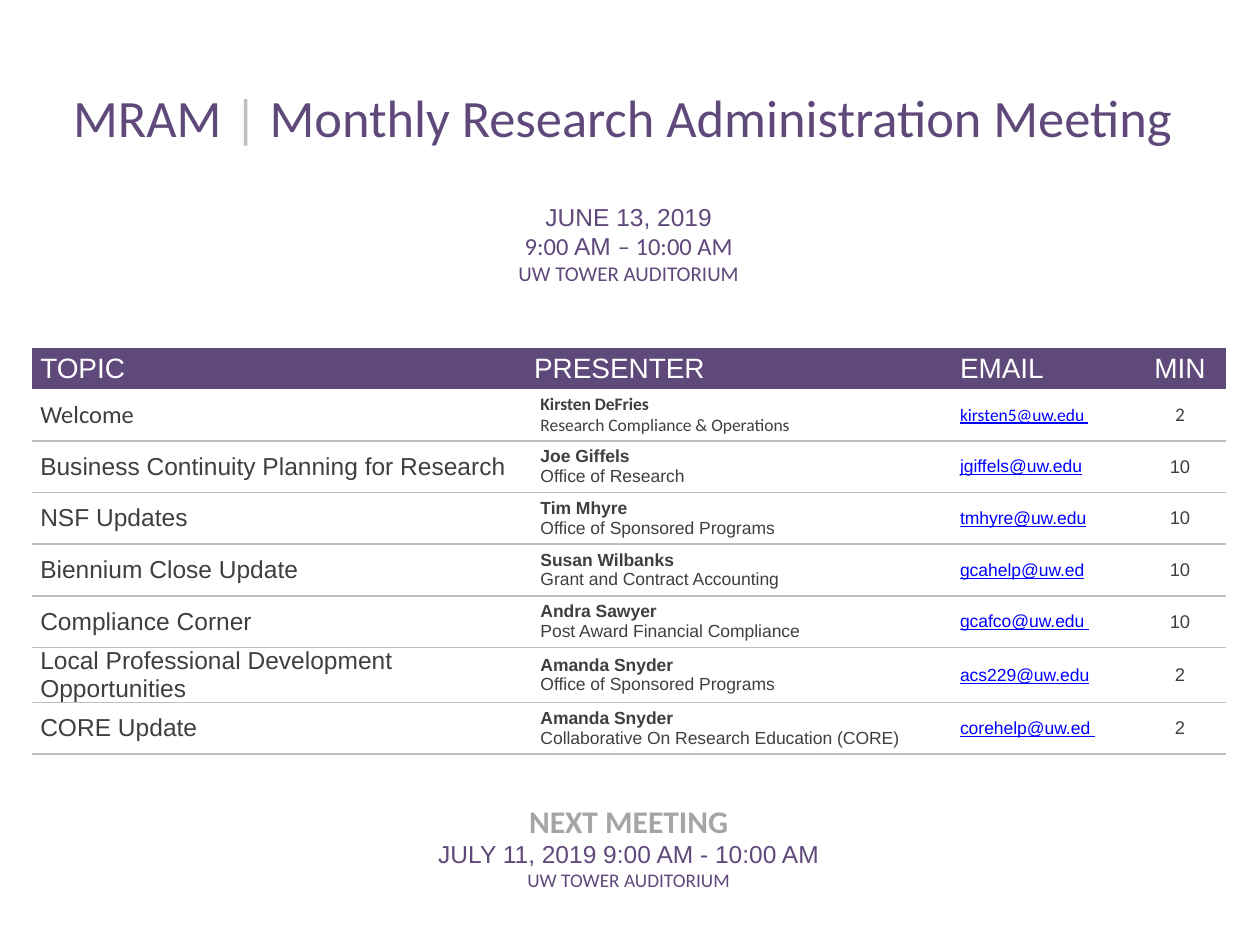
from dataclasses import dataclass

from lxml import etree
from pptx import Presentation
from pptx import util as u
from pptx.dml.color import RGBColor
from pptx.enum import text
from pptx.oxml.ns import qn

PURPLE = RGBColor(0x5F, 0x49, 0x7A)
WHITE = RGBColor(0xFF, 0xFF, 0xFF)
INK = RGBColor(0x3F, 0x3F, 0x3F)
LINK = RGBColor(0x00, 0x00, 0xFF)
RULE = RGBColor(0xBF, 0xBF, 0xBF)
GREY = RGBColor(0xA5, 0xA5, 0xA5)

LEFT, TOP = 0.25, 0.58
COLS = [3.92, 3.33, 1.5, 0.73]
TITLE_H, DATE_H, HEAD_H, ITEM_H, NEXT_H = 0.62, 1.56, 0.33, 0.41, 1.1
PAD, WIDE_PAD = 0.07, 0.12
NO_STYLE = "{2D5ABB26-0587-4C30-8999-92F81FD0307C}"

LEFT_AL, CENTER = text.PP_ALIGN.LEFT, text.PP_ALIGN.CENTER
MIDDLE, BOTTOM = text.MSO_ANCHOR.MIDDLE, text.MSO_ANCHOR.BOTTOM


@dataclass
class Run:
    text: str
    font: str | None = None
    color: RGBColor | None = None


@dataclass
class Line:
    runs: list[Run]
    size: float
    color: RGBColor
    font: str = "Arial"
    bold: bool = False
    underline: bool = False


@dataclass
class Item:
    topic: str
    presenter: str
    office: str
    email: str
    minutes: int
    font: str = "Arial"


ITEMS = [
    Item("Welcome", "Kirsten DeFries", "Research Compliance & Operations",
         "kirsten5@uw.edu ", 2, "Calibri"),
    Item("Business Continuity Planning for Research", "Joe Giffels",
         "Office of Research", "jgiffels@uw.edu", 10),
    Item("NSF Updates", "Tim Mhyre", "Office of Sponsored Programs",
         "tmhyre@uw.edu", 10),
    Item("Biennium Close Update", "Susan Wilbanks",
         "Grant and Contract Accounting", "gcahelp@uw.ed", 10),
    Item("Compliance Corner", "Andra Sawyer",
         "Post Award Financial Compliance", "gcafco@uw.edu ", 10),
    Item("Local Professional Development Opportunities", "Amanda Snyder",
         "Office of Sponsored Programs", "acs229@uw.edu", 2),
    Item("CORE Update", "Amanda Snyder",
         "Collaborative On Research Education (CORE)", "corehelp@uw.ed ", 2),
]


def line(content: str, size: float, color: RGBColor, font: str = "Arial",
         **style: bool) -> Line:
    return Line([Run(content)], size, color, font, **style)


def fill_cell(cell, lines: list[Line], align=LEFT_AL, anchor=MIDDLE,
              pad: float = PAD, bottom: float = 0, fill: RGBColor = WHITE) -> None:
    cell.fill.solid()
    cell.fill.fore_color.rgb = fill
    cell.vertical_anchor = anchor
    cell.margin_left = cell.margin_right = u.Inches(pad)
    cell.margin_top, cell.margin_bottom = 0, u.Inches(bottom)
    tf = cell.text_frame
    for i, ln in enumerate(lines):
        p = tf.add_paragraph() if i else tf.paragraphs[0]
        p.alignment = align
        p.font.size = u.Pt(ln.size)
        p.font.bold, p.font.underline = ln.bold, ln.underline
        p.font.name = ln.font
        p.font.color.rgb = ln.color
        for part in ln.runs:
            r = p.add_run()
            r.text = part.text
            if part.font:
                r.font.name = part.font
            if part.color:
                r.font.color.rgb = part.color


def rule_cell(cell, edge: str) -> None:
    """Draw a thin rule on the top (lnT) or bottom (lnB) edge."""
    tc_pr = cell._tc.get_or_add_tcPr()
    ln = etree.Element(qn(f"a:{edge}"), w=str(u.Pt(1)))
    solid = etree.SubElement(ln, qn("a:solidFill"))
    etree.SubElement(solid, qn("a:srgbClr"), val=str(RULE))
    tc_pr.insert(0, ln)


def add_banner(table, row: int, lines: list[Line], bottom: float = 0) -> None:
    """Fill a row merged across all columns."""
    cell = table.cell(row, 0)
    cell.merge(table.cell(row, len(COLS) - 1))
    fill_cell(cell, lines, CENTER, BOTTOM, bottom=bottom)


def add_item(table, row: int, item: Item) -> None:
    cells = table.rows[row].cells
    fill_cell(cells[0], [line(item.topic, 14, INK, item.font)])
    fill_cell(cells[1], [line(item.presenter, 10, INK, item.font, bold=True),
                         line(item.office, 10, INK, item.font)], pad=WIDE_PAD)
    fill_cell(cells[2], [line(item.email, 10, LINK, item.font, underline=True)],
              pad=WIDE_PAD)
    fill_cell(cells[3], [line(str(item.minutes), 11 if item.font == "Calibri" else 10.5,
                              INK, item.font)], CENTER)
    for cell in cells:
        rule_cell(cell, "lnB")


def main() -> None:
    prs = Presentation()
    prs.slide_width, prs.slide_height = u.Inches(10), u.Inches(7.5)
    slide = prs.slides.add_slide(prs.slide_layouts[6])

    heights = [TITLE_H, DATE_H, HEAD_H] + [ITEM_H] * len(ITEMS) + [NEXT_H]
    frame = slide.shapes.add_table(
        len(heights), len(COLS), u.Inches(LEFT), u.Inches(TOP),
        u.Inches(sum(COLS)), u.Inches(sum(heights)))
    table = frame.table
    table.first_row = table.horz_banding = False
    table._tbl.tblPr.find(qn("a:tableStyleId")).text = NO_STYLE
    for column, width in zip(table.columns, COLS):
        column.width = u.Inches(width)
    for row, height in zip(table.rows, heights):
        row.height = u.Inches(height)

    add_banner(table, 0, [Line(
        [Run("MRAM "), Run("|", color=RULE),
         Run(" Monthly Research Administration Meeting ")], 30, PURPLE, "Calibri")])
    add_banner(table, 1, [
        line("JUNE 13, 2019", 14, PURPLE),
        Line([Run("9:00 "), Run("AM ", "Arial"), Run("– 10:00 AM")],
             14, PURPLE, "Calibri"),
        line("UW TOWER AUDITORIUM", 12, PURPLE, "Calibri")], bottom=0.48)

    headings = [("TOPIC", LEFT_AL, PAD), ("PRESENTER", LEFT_AL, PAD),
                ("EMAIL", LEFT_AL, WIDE_PAD), ("MIN", CENTER, PAD)]
    for cell, (label, align, pad) in zip(table.rows[2].cells, headings):
        fill_cell(cell, [line(label, 16, WHITE)], align, pad=pad, fill=PURPLE)

    for row, item in enumerate(ITEMS, start=3):
        add_item(table, row, item)

    last = len(heights) - 1
    add_banner(table, last, [
        line("NEXT MEETING", 18, GREY, "Calibri", bold=True),
        line("JULY 11, 2019 9:00 AM - 10:00 AM", 14, PURPLE),
        line("UW TOWER AUDITORIUM", 11, PURPLE, "Calibri")])
    for cell in table.rows[last].cells:
        rule_cell(cell, "lnT")

    prs.save("out.pptx")


if __name__ == "__main__":
    main()
